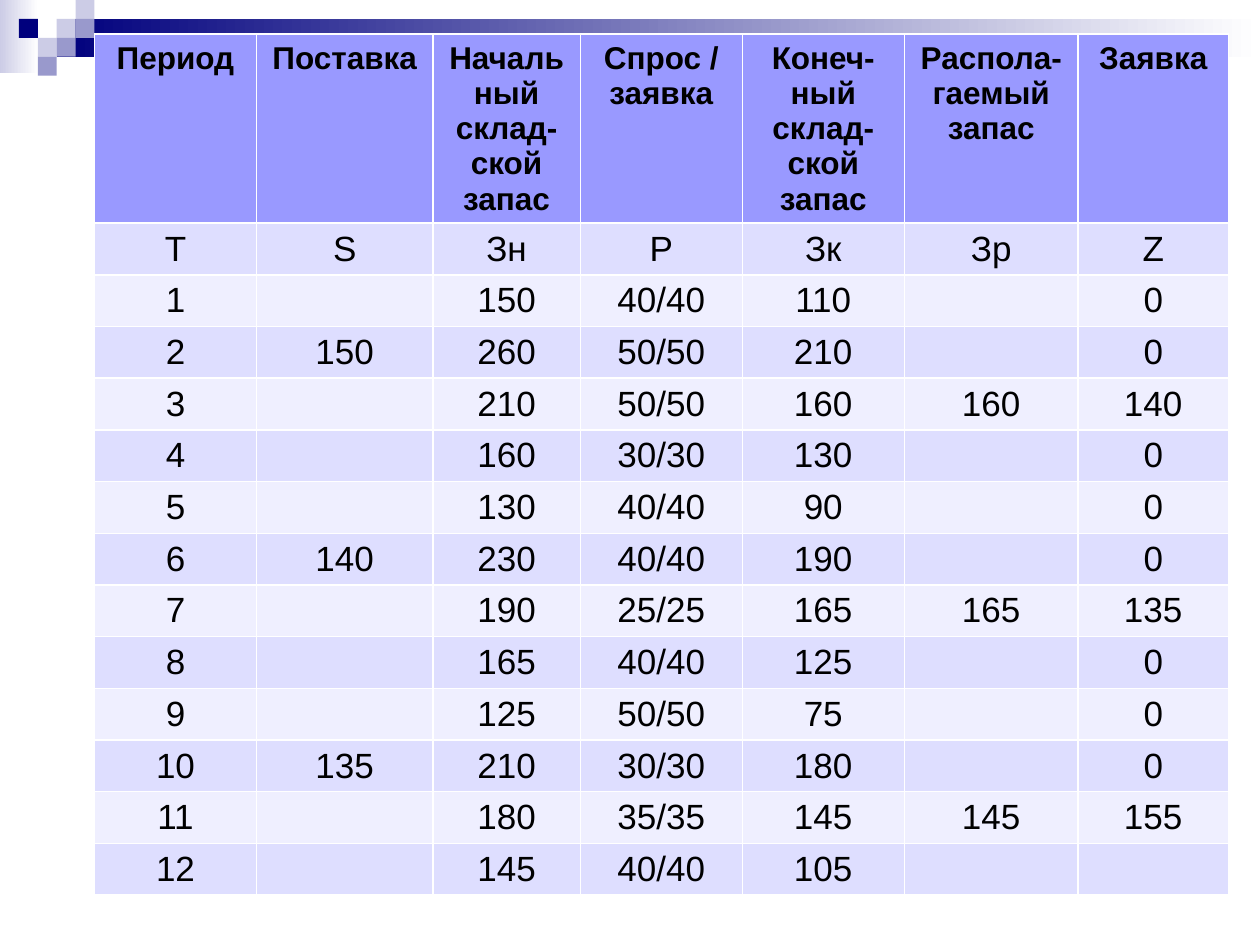
from pptx import Presentation
from pptx.dml.color import RGBColor
from pptx.enum.shapes import MSO_SHAPE
from pptx.enum.text import PP_ALIGN
from pptx.util import Pt

RECTANGLE = MSO_SHAPE.RECTANGLE
CENTER = PP_ALIGN.CENTER

NAVY, VIOLET, PALE_VIOLET, WHITE = "00007D", "9999CC", "CCCCE6", "FFFFFF"
HEADER_FILL, DARK_ROW, LIGHT_ROW = "9999FF", "DEDEFF", "EFEFFF"


def color(hex_value):
    return RGBColor.from_string(hex_value)


def add_rectangle(left, top, width, height, start, end=None):
    """Fill is solid, or a left-to-right gradient when end is given."""
    shape = slide.shapes.add_shape(RECTANGLE, Pt(left), Pt(top), Pt(width), Pt(height))
    shape.shadow.inherit = False
    shape.line.fill.background()
    if end is None:
        shape.fill.solid()
        shape.fill.fore_color.rgb = color(start)
    else:
        shape.fill.gradient()
        shape.fill.gradient_angle = 0
        for stop, hex_value in zip(shape.fill.gradient_stops, (start, end)):
            stop.color.rgb = color(hex_value)


presentation = Presentation()
presentation.slide_width, presentation.slide_height = Pt(720), Pt(540)
slide = presentation.slides.add_slide(presentation.slide_layouts[6])

# Corner decoration: two gradient bands and squares on a grid
add_rectangle(0, 0, 22, 42, PALE_VIOLET, WHITE)
add_rectangle(32.4, 10.8, 687.6, 21.6, NAVY, WHITE)
SQUARE = 10.8
squares = [
    (3, 1, PALE_VIOLET), (4, 0, PALE_VIOLET), (4, 1, VIOLET), (2, 2, PALE_VIOLET),
    (1, 1, NAVY), (3, 2, VIOLET), (2, 3, VIOLET),
]
for column, row, fill in squares:
    add_rectangle(column * SQUARE, row * SQUARE, SQUARE, SQUARE, fill)

# Stock table
rows = [
    ("Период", "Поставка", "Начальный склад-ской запас", "Спрос / заявка",
     "Конеч-ный склад-ской запас", "Распола-гаемый запас", "Заявка"),
    ("T", "S", "Зн", "P", "Зк", "Зр", "Z"),
    ("1", "", "150", "40/40", "110", "", "0"),
    ("2", "150", "260", "50/50", "210", "", "0"),
    ("3", "", "210", "50/50", "160", "160", "140"),
    ("4", "", "160", "30/30", "130", "", "0"),
    ("5", "", "130", "40/40", "90", "", "0"),
    ("6", "140", "230", "40/40", "190", "", "0"),
    ("7", "", "190", "25/25", "165", "165", "135"),
    ("8", "", "165", "40/40", "125", "", "0"),
    ("9", "", "125", "50/50", "75", "", "0"),
    ("10", "135", "210", "30/30", "180", "", "0"),
    ("11", "", "180", "35/35", "145", "145", "155"),
    ("12", "", "145", "40/40", "105", "", ""),
]
column_widths = [92.6, 100.8, 84.2, 92.6, 92.6, 99.4, 85.8]
HEADER_HEIGHT, ROW_HEIGHT = 107, 29.5
table_height = HEADER_HEIGHT + ROW_HEIGHT * (len(rows) - 1)

# The default table style supplies the white grid and the thick line under the header
table = slide.shapes.add_table(
    len(rows), len(column_widths), Pt(54), Pt(19.5), Pt(sum(column_widths)), Pt(table_height)
).table
for column, width in zip(table.columns, column_widths):
    column.width = Pt(width)

for row_index, texts in enumerate(rows):
    is_header = row_index == 0
    table.rows[row_index].height = Pt(HEADER_HEIGHT if is_header else ROW_HEIGHT)
    row_fill = HEADER_FILL if is_header else DARK_ROW if row_index % 2 else LIGHT_ROW
    for column_index, text in enumerate(texts):
        cell = table.cell(row_index, column_index)
        cell.fill.solid()
        cell.fill.fore_color.rgb = color(row_fill)
        cell.text = text
        paragraph = cell.text_frame.paragraphs[0]
        paragraph.alignment = CENTER
        paragraph.font.name = "Arial"
        paragraph.font.size = Pt(18 if is_header else 20)
        paragraph.font.bold = is_header
        paragraph.font.color.rgb = color("000000")

presentation.save("out.pptx")
